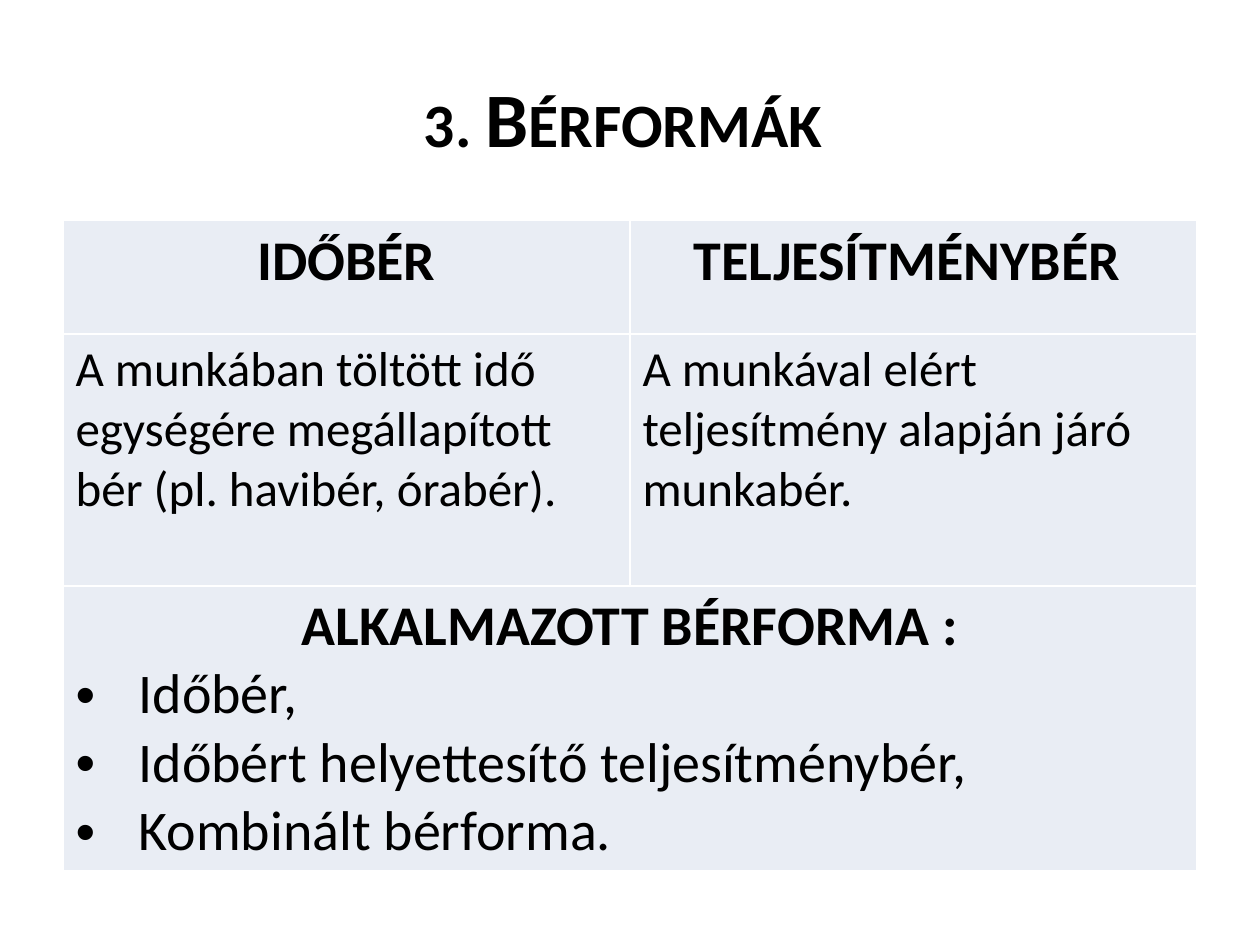
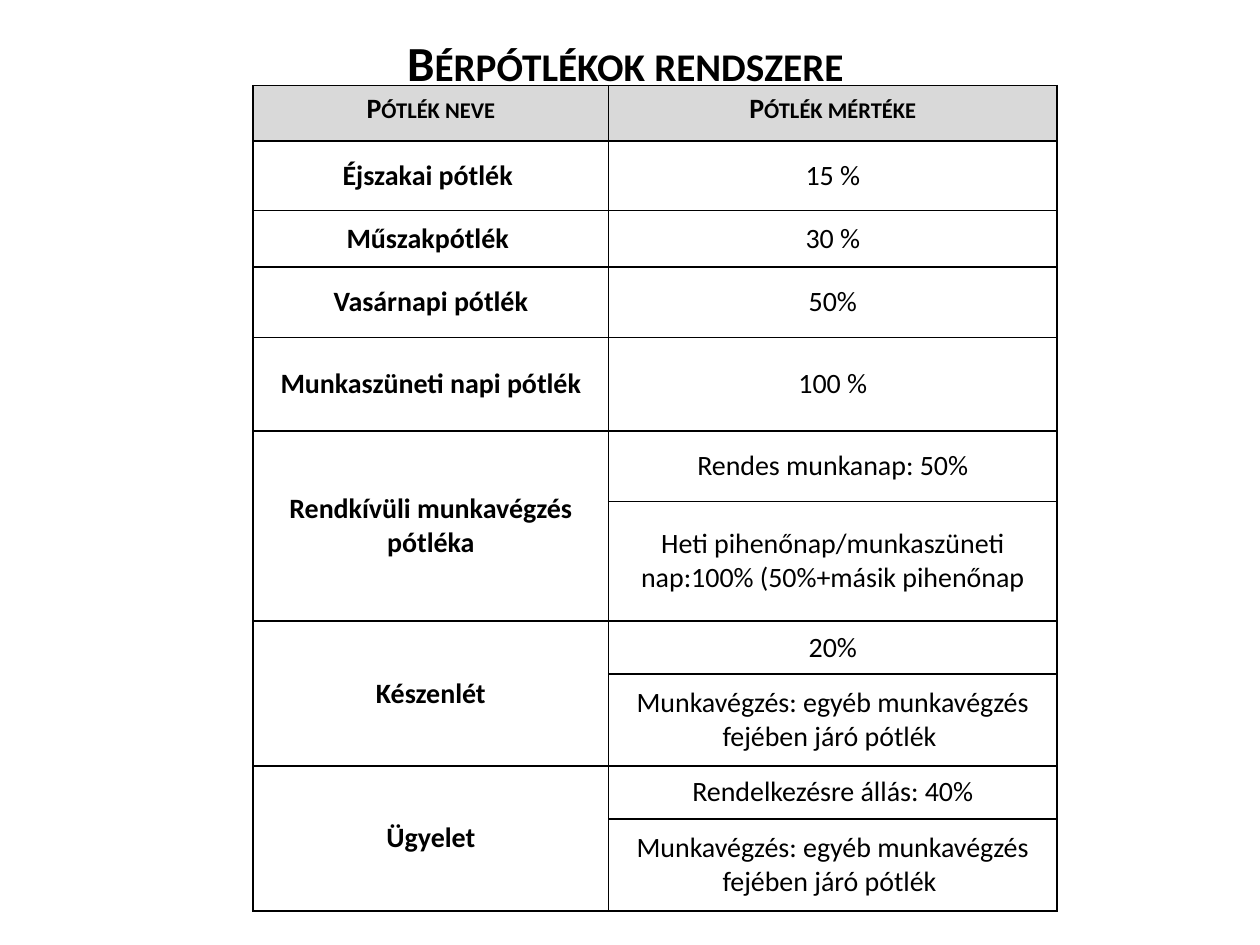
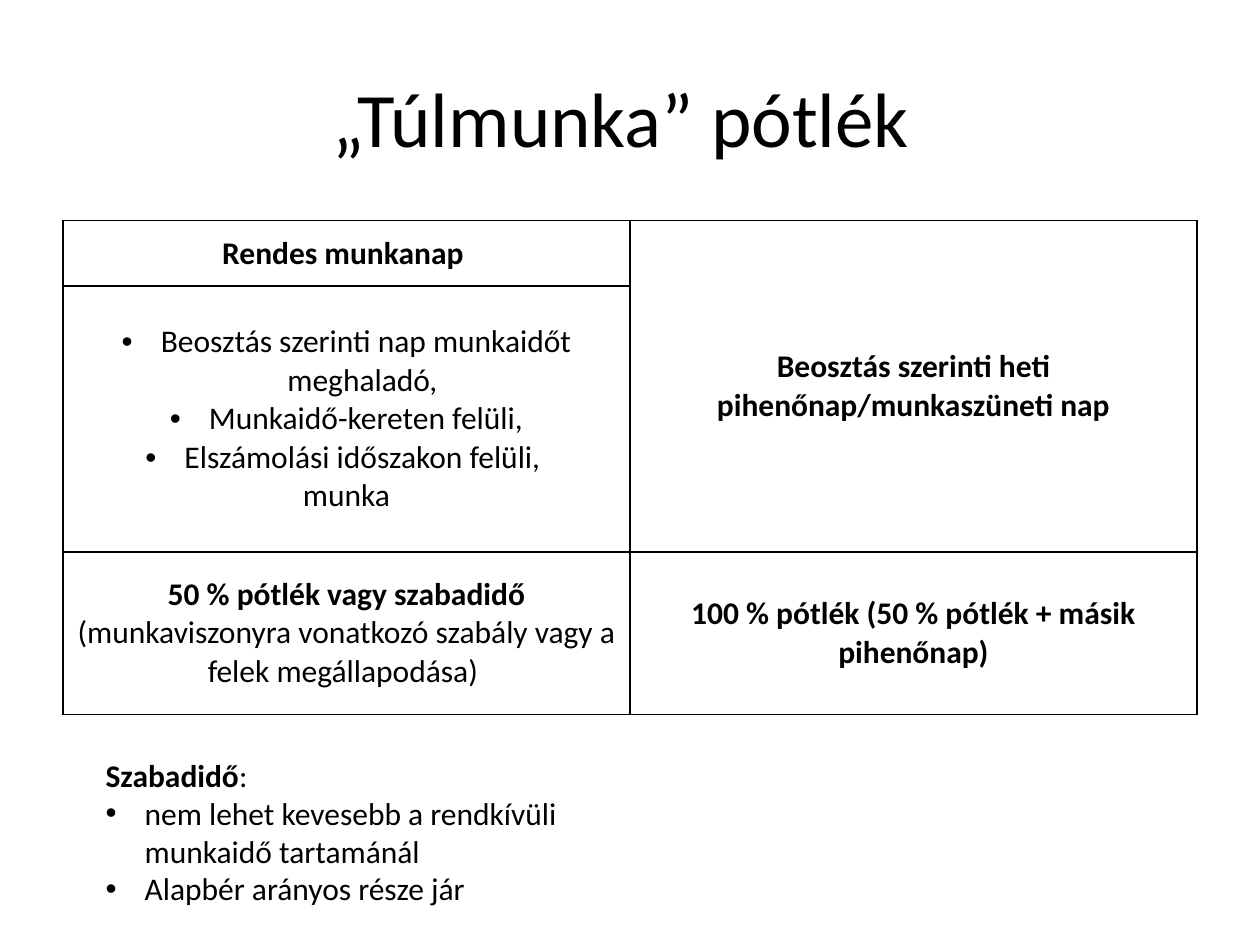
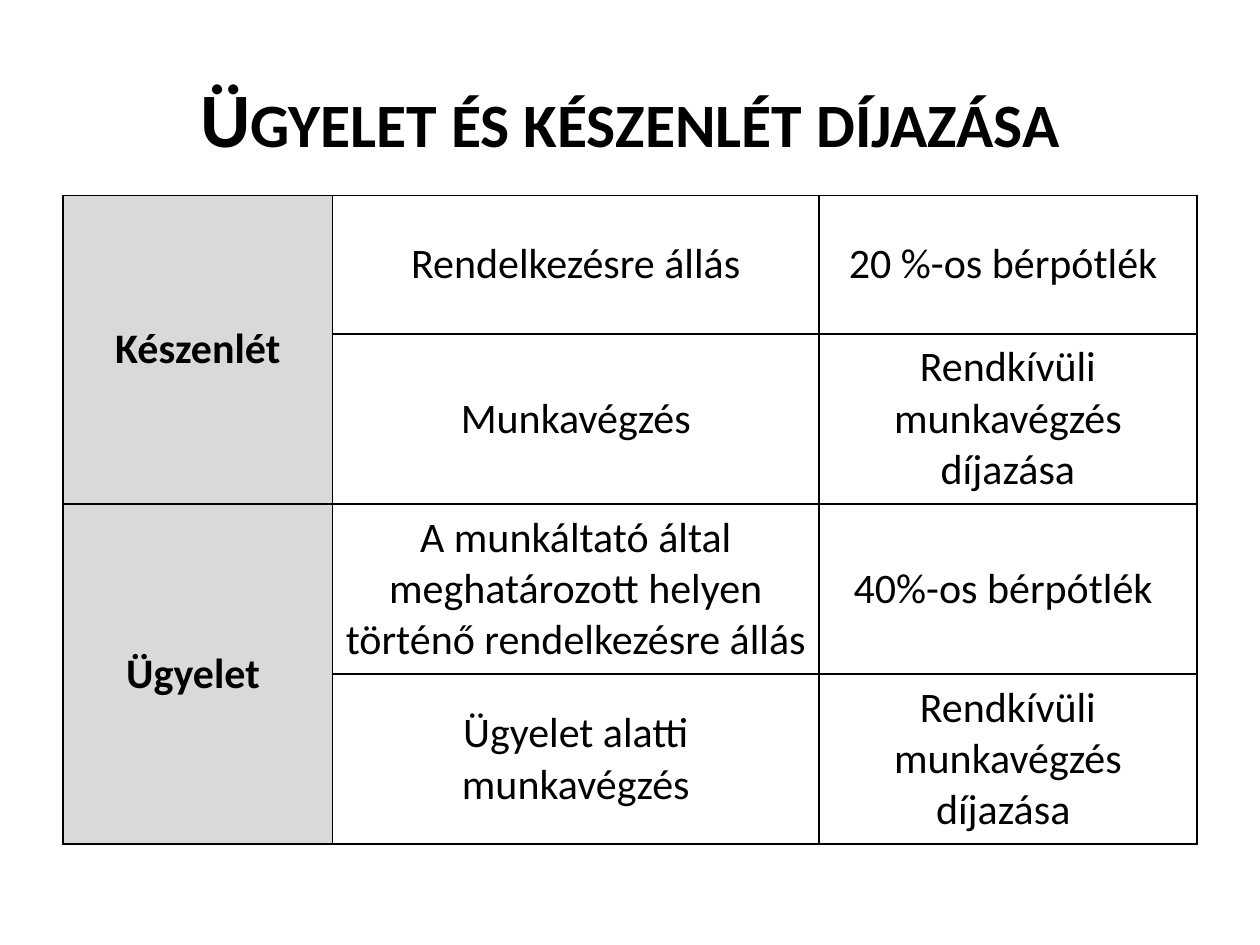
from dataclasses import dataclass

from lxml import etree
from pptx import Presentation
from pptx.dml.color import RGBColor
from pptx.enum.text import MSO_ANCHOR, MSO_AUTO_SIZE, PP_ALIGN
from pptx.oxml.ns import qn
from pptx.util import Inches, Pt

CENTER, LEFT = PP_ALIGN.CENTER, PP_ALIGN.LEFT
TOP, MIDDLE = MSO_ANCHOR.TOP, MSO_ANCHOR.MIDDLE
GROW = MSO_AUTO_SIZE.SHAPE_TO_FIT_TEXT

BLACK = RGBColor(0x00, 0x00, 0x00)
WHITE = RGBColor(0xFF, 0xFF, 0xFF)
PALE_BLUE = RGBColor(0xE9, 0xED, 0xF4)
GREY = RGBColor(0xD9, 0xD9, 0xD9)

FONT = "Calibri"
SLIDE_WIDTH, SLIDE_HEIGHT = Inches(10), Inches(7.5)
GRID_COLUMNS, GRID_ROWS = 100, 75
MARGIN, CONTENT_WIDTH = 5, 90
TITLE_TOP, TITLE_HEIGHT = 3, 12.5
BORDER_SIDES = ("a:lnL", "a:lnR", "a:lnT", "a:lnB")


@dataclass(frozen=True)
class Span:
    text: str
    bold: bool = False
    small_caps: bool = False


@dataclass(frozen=True)
class Para:
    spans: tuple[Span, ...]
    size: float
    align: PP_ALIGN = CENTER
    indent: float = 0


@dataclass(frozen=True)
class Cell:
    row: int
    column: int
    paras: tuple[Para, ...]
    fill: RGBColor | None = None
    row_span: int = 1
    column_span: int = 1


@dataclass(frozen=True)
class Grid:
    left: float
    top: float
    columns: tuple[float, ...]
    rows: tuple[float, ...]
    border: RGBColor = BLACK
    anchor: MSO_ANCHOR = MIDDLE


def across(columns: float) -> int:
    return round(SLIDE_WIDTH * columns / GRID_COLUMNS)


def down(rows: float) -> int:
    return round(SLIDE_HEIGHT * rows / GRID_ROWS)


def line(text: str, size: float, bold: bool = False, small_caps: bool = False,
         align: PP_ALIGN = CENTER, indent: float = 0) -> Para:
    return Para((Span(text, bold, small_caps),), size, align, indent)


def add_bullet(paragraph, indent: float) -> None:
    properties = paragraph._p.get_or_add_pPr()
    properties.set("marL", str(across(indent)))
    properties.set("indent", str(-across(indent)))
    etree.SubElement(properties, qn("a:buFont")).set("typeface", "Arial")
    etree.SubElement(properties, qn("a:buChar")).set("char", "•")


def write(frame, paras: tuple[Para, ...]) -> None:
    for index, para in enumerate(paras):
        paragraph = frame.paragraphs[0] if index == 0 else frame.add_paragraph()
        paragraph.alignment = para.align
        if para.indent:
            add_bullet(paragraph, para.indent)
        for span in para.spans:
            run = paragraph.add_run()
            run.text = span.text
            formats = {"name": FONT, "size": Pt(para.size), "bold": span.bold}
            for name, value in formats.items():
                setattr(run.font, name, value)
            run.font.color.rgb = BLACK
            if span.small_caps:
                run._r.get_or_add_rPr().set("cap", "small")


def add_text(page, left: float, top: float, width: float, height: float,
             paras: tuple[Para, ...], **frame_formats) -> None:
    box = page.shapes.add_textbox(across(left), down(top), across(width), down(height))
    for name, value in {"word_wrap": True, **frame_formats}.items():
        setattr(box.text_frame, name, value)
    write(box.text_frame, paras)


def add_title(page, text: str, size: float = 44, height: float = TITLE_HEIGHT,
              heading: bool = True) -> None:
    title = line(text, size, bold=heading, small_caps=heading)
    add_text(page, MARGIN, TITLE_TOP, CONTENT_WIDTH, height, (title,),
             vertical_anchor=MIDDLE)


def add_borders(table_cell, color: RGBColor) -> None:
    properties = table_cell._tc.get_or_add_tcPr()
    for side in BORDER_SIDES:
        edge = etree.SubElement(properties, qn(side), w=str(Pt(1)))
        fill = etree.SubElement(edge, qn("a:solidFill"))
        etree.SubElement(fill, qn("a:srgbClr"), val=str(color))


def add_grid(page, grid: Grid, cells: list[Cell]) -> None:
    frame = page.shapes.add_table(
        len(grid.rows), len(grid.columns), across(grid.left), down(grid.top),
        across(sum(grid.columns)), down(sum(grid.rows)))
    table = frame.table
    table.first_row = table.horz_banding = False
    for column, width in zip(table.columns, grid.columns):
        column.width = across(width)
    for row, height in zip(table.rows, grid.rows):
        row.height = down(height)
    for table_cell in table.iter_cells():
        add_borders(table_cell, grid.border)
        table_cell.fill.background()
    for cell in cells:
        target = table.cell(cell.row, cell.column)
        last_row = cell.row + cell.row_span - 1
        last_column = cell.column + cell.column_span - 1
        if (last_row, last_column) != (cell.row, cell.column):
            target.merge(table.cell(last_row, last_column))
        target.vertical_anchor = grid.anchor
        if cell.fill is not None:
            target.fill.solid()
            target.fill.fore_color.rgb = cell.fill
        write(target.text_frame, cell.paras)


def build_wage_forms(page) -> None:
    add_title(page, "3. Bérformák ")
    headings = ("IDŐBÉR", "TELJESÍTMÉNYBÉR ")
    meanings = (
        "A munkában töltött idő egységére megállapított bér (pl. havibér, órabér).",
        "A munkával elért teljesítmény alapján járó munkabér.",
    )
    applied = ("Időbér,", "Időbért helyettesítő teljesítménybér,", "Kombinált bérforma.")
    cells = []
    for column, (heading, meaning) in enumerate(zip(headings, meanings)):
        cells.append(Cell(0, column, (line(heading, 32, True),), PALE_BLUE))
        cells.append(Cell(1, column, (line(meaning, 28, align=LEFT),), PALE_BLUE))
    applied_paras = (line("ALKALMAZOTT BÉRFORMA :", 32, True),
                     *(line(text, 32, align=LEFT, indent=5) for text in applied))
    cells.append(Cell(2, 0, applied_paras, PALE_BLUE, column_span=2))
    add_grid(page, Grid(MARGIN, 17.5, (45, 45), (9, 20, 22.6), WHITE, TOP), cells)


def build_supplements(page) -> None:
    add_title(page, "Bérpótlékok rendszere ", size=28, height=3.8)
    work_rate = "Munkavégzés: egyéb munkavégzés fejében járó pótlék "
    supplements = (
        ("Éjszakai pótlék ", ("15 %",)),
        ("Műszakpótlék ", ("30 %",)),
        ("Vasárnapi pótlék", ("50%",)),
        ("Munkaszüneti napi pótlék", ("100 %",)),
        ("Rendkívüli munkavégzés pótléka",
         ("Rendes munkanap: 50%",
          "Heti pihenőnap/munkaszüneti nap:100% (50%+másik pihenőnap")),
        ("Készenlét", ("20%", work_rate)),
        ("Ügyelet", ("Rendelkezésre állás: 40%", work_rate)),
    )
    cells = [Cell(0, column, (line(text, 16, True, True),), GREY)
             for column, text in enumerate(("Pótlék neve", "Pótlék mértéke"))]
    row = 1
    for name, rates in supplements:
        cells.append(Cell(row, 0, (line(name, 16, True),), row_span=len(rates)))
        for rate in rates:
            cells.append(Cell(row, 1, (line(rate, 16),)))
            row += 1
    heights = (4.4, 5.5, 4.5, 5.6, 7.4, 5.6, 9.5, 4.2, 7.3, 4.2, 7.3)
    add_grid(page, Grid(20.1, 6.8, (28.2, 35.6), heights), cells)
    header = page.shapes[-1].table
    for column in range(len(header.columns)):
        header.cell(0, column).vertical_anchor = TOP


def build_overtime(page) -> None:
    add_title(page, "„Túlmunka” pótlék ", heading=False)
    cases = ("Beosztás szerinti nap munkaidőt meghaladó, ",
             "Munkaidő-kereten felüli,", "Elszámolási időszakon felüli, ")
    case_paras = (*(line(text, 18, indent=3.1) for text in cases), line("munka", 18))
    choice = Para((
        Span("50 % pótlék vagy szabadidő ", True),
        Span("(munkaviszonyra vonatkozó szabály vagy a felek megállapodása) "),
    ), 18)
    rest_day = "Beosztás szerinti heti pihenőnap/munkaszüneti nap"
    rest_rate = "100 % pótlék (50 % pótlék + másik pihenőnap)"
    add_grid(page, Grid(MARGIN, 17.5, (45, 45), (5.2, 21.1, 12.9)), [
        Cell(0, 0, (line("Rendes munkanap ", 18, True),)),
        Cell(0, 1, (line(rest_day, 18, True),), row_span=2),
        Cell(1, 0, case_paras),
        Cell(2, 0, (choice,)),
        Cell(2, 1, (line(rest_rate, 18, True),)),
    ])
    rules = ("nem lehet kevesebb a rendkívüli munkaidő tartamánál",
             "Alapbér arányos része jár")
    add_text(page, 7.4, 59.5, 42.6, 13.1, (
        Para((Span("Szabadidő", True), Span(":")), 18, LEFT),
        *(line(text, 18, align=LEFT, indent=3.1) for text in rules),
    ), auto_size=GROW)


def build_standby(page) -> None:
    add_title(page, "Ügyelet és készenlét díjazása")
    duties = (
        ("Készenlét", (
            ("Rendelkezésre állás", "20 %-os bérpótlék "),
            ("Munkavégzés", "Rendkívüli munkavégzés díjazása"))),
        ("Ügyelet ", (
            ("A munkáltató által meghatározott helyen történő rendelkezésre állás",
             "40%-os bérpótlék "),
            ("Ügyelet alatti munkavégzés", "Rendkívüli munkavégzés díjazása "))),
    )
    cells = []
    row = 0
    for duty, activities in duties:
        cells.append(Cell(row, 0, (line(duty, 24, True),), GREY, len(activities)))
        for activity in activities:
            for column, text in enumerate(activity, start=1):
                cells.append(Cell(row, column, (line(text, 24),)))
            row += 1
    heights = (11, 13.5, 13.5, 13.5)
    add_grid(page, Grid(MARGIN, 15.5, (21.4, 38.6, 30), heights), cells)


def main() -> None:
    deck = Presentation()
    deck.slide_width, deck.slide_height = SLIDE_WIDTH, SLIDE_HEIGHT
    blank = deck.slide_layouts[6]
    for build in (build_wage_forms, build_supplements, build_overtime, build_standby):
        build(deck.slides.add_slide(blank))
    deck.save("out.pptx")


if __name__ == "__main__":
    main()
